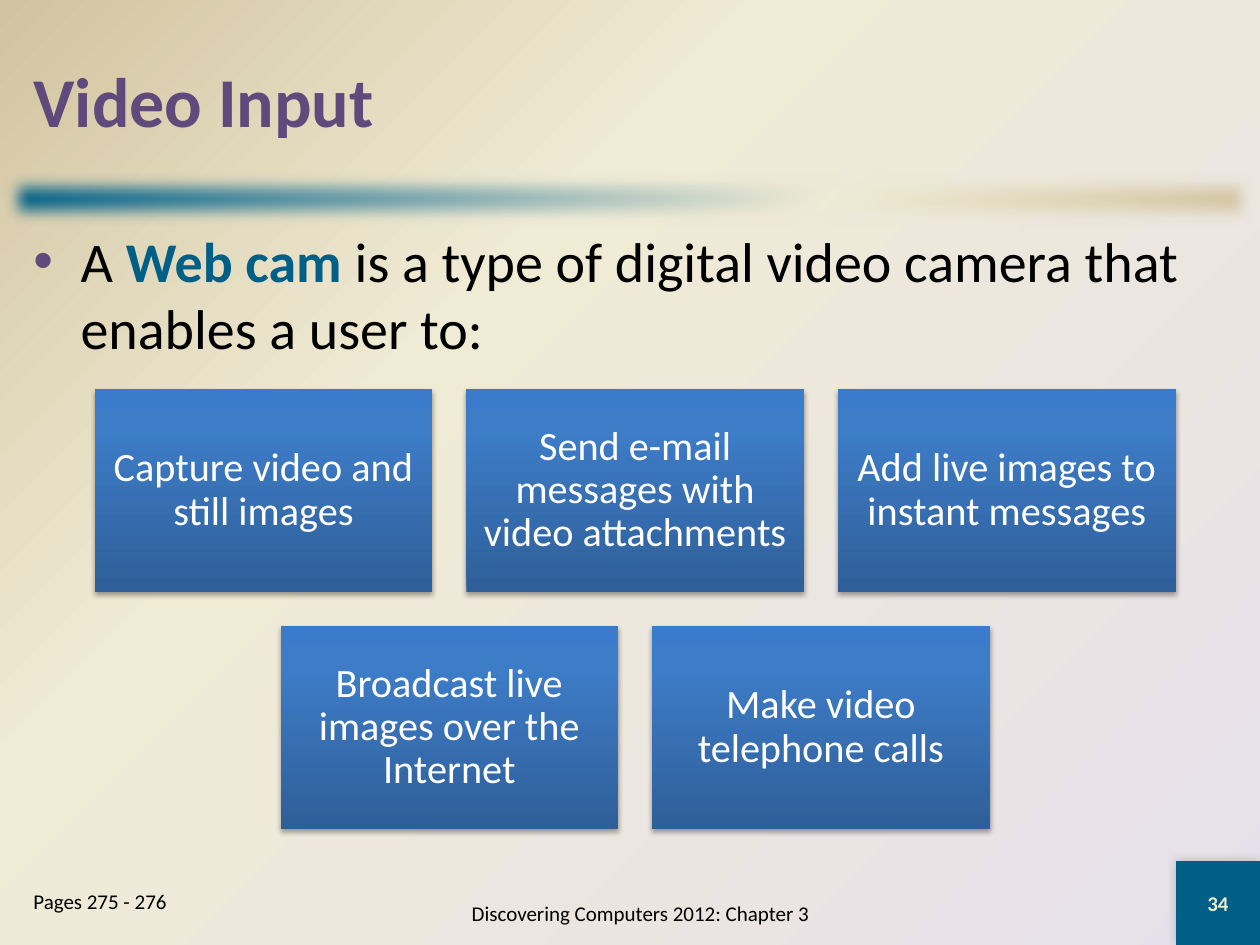
from lxml.etree import SubElement
from pptx import Presentation
from pptx.dml.color import RGBColor
from pptx.enum.shapes import MSO_SHAPE
from pptx.enum.text import MSO_ANCHOR, PP_ALIGN
from pptx.oxml.ns import qn
from pptx.util import Pt

SLIDE_W, SLIDE_H = 720, 540
FONT = "Calibri"
TEAL, PURPLE, BLACK, WHITE, CREAM = "005F86", "604A7B", "000000", "FFFFFF", "EEEBCA"

TITLE = "Video Input"
INTRO = [
    ("A ", BLACK, False),
    ("Web cam ", TEAL, True),
    ("is a type of digital video camera that enables a user to:", BLACK, False),
]
USES = [
    ["Capture video and still images", "Send e-mail messages with video attachments",
     "Add live images to instant messages"],
    ["Broadcast live images over the Internet", "Make video telephone calls"],
]
PAGES = "Pages 275 - 276"
BOOK = "Discovering Computers 2012: Chapter 3"
PAGE_NUMBER = "34"

BACKDROP = [(0, "E6E0EC"), (65, "F0EBD5"), (100, "D1C39F")]
RULE = [(0, TEAL), (65, "F0EBD5"), (100, "D1C39F")]
CARD = [(0, "2F5F99"), (80, "3D7CC7"), (100, "3A7CCB")]

CARD_W, CARD_H, CARD_GAP = 193, 116, 19.4
CARDS_TOP, CARDS_CENTER = 222.3, 363
CORNER = 48
CORNER_BOX = (SLIDE_W - CORNER, SLIDE_H - CORNER, CORNER, CORNER)


def rgb(value):
    return RGBColor.from_string(value)


def apply(target, **values):
    for name, value in values.items():
        setattr(target, name, value)


def node(parent, tag, **attributes):
    return SubElement(parent, qn(tag), {key: str(value) for key, value in attributes.items()})


def paint_gradient(fill, owner, stops, angle=None):
    fill.gradient()
    gradient = next(owner.iter(qn("a:gradFill")))
    for child in list(gradient):
        gradient.remove(child)
    stop_list = node(gradient, "a:gsLst")
    for position, color in stops:
        stop = node(stop_list, "a:gs", pos=position * 1000)
        node(stop, "a:srgbClr", val=color)
    if angle is None:
        path = node(gradient, "a:path", path="circle")
        node(path, "a:fillToRect", l=100000, t=100000)
    else:
        node(gradient, "a:lin", ang=angle * 60000, scaled=0)


def add_effect(shape, tag, **attributes):
    shape.shadow.inherit = False
    return node(shape._element.spPr.find(qn("a:effectLst")), tag, **attributes)


def add_shadow(shape, alpha, blur, distance, angle):
    shadow = add_effect(shape, "a:outerShdw", blurRad=Pt(blur), dist=Pt(distance),
                        dir=angle * 60000, rotWithShape=0)
    color = node(shadow, "a:srgbClr", val=BLACK)
    node(color, "a:alpha", val=alpha * 1000)


def add_rectangle(slide, box):
    rectangle = slide.shapes.add_shape(MSO_SHAPE.RECTANGLE, *map(Pt, box))
    rectangle.line.fill.background()
    return rectangle


def write(holder, runs, size, align=PP_ALIGN.LEFT, anchor=MSO_ANCHOR.TOP, inset=None):
    frame = holder.text_frame
    apply(frame, word_wrap=True, vertical_anchor=anchor)
    if inset is not None:
        apply(frame, **{f"margin_{side}": Pt(inset) for side in ("left", "top", "right", "bottom")})
    paragraph = frame.paragraphs[0]
    paragraph.alignment = align
    for text, color, bold in runs:
        run = paragraph.add_run()
        run.text = text
        apply(run.font, name=FONT, size=Pt(size), bold=bold)
        run.font.color.rgb = rgb(color)
    return paragraph


def add_text(slide, box, runs, size, **layout):
    return write(slide.shapes.add_textbox(*map(Pt, box)), runs, size, **layout)


def add_bullet(paragraph, mark, color, indent):
    properties = paragraph._p.get_or_add_pPr()
    properties.set("marL", str(Pt(indent)))
    properties.set("indent", str(-Pt(indent)))
    node(node(properties, "a:buClr"), "a:srgbClr", val=color)
    node(properties, "a:buFont", typeface="Arial")
    node(properties, "a:buChar", char=mark)


def add_cards(slide):
    for row, uses in enumerate(USES):
        row_width = len(uses) * (CARD_W + CARD_GAP) - CARD_GAP
        top = CARDS_TOP + row * (CARD_H + CARD_GAP)
        for column, use in enumerate(uses):
            left = CARDS_CENTER - row_width / 2 + column * (CARD_W + CARD_GAP)
            card = add_rectangle(slide, (left, top, CARD_W, CARD_H))
            paint_gradient(card.fill, card._element, CARD, 270)
            add_shadow(card, 35, 3.1, 1.8, 90)
            label = write(card, [(use, WHITE, False)], 23, align=PP_ALIGN.CENTER,
                          anchor=MSO_ANCHOR.MIDDLE, inset=7)
            label.line_spacing = 0.9


def main():
    deck = Presentation()
    apply(deck, slide_width=Pt(SLIDE_W), slide_height=Pt(SLIDE_H))
    slide = deck.slides.add_slide(deck.slide_layouts[5])
    paint_gradient(slide.background.fill, slide._element, BACKDROP)

    rule = add_rectangle(slide, (0, 96, SLIDE_W, 36))
    paint_gradient(rule.fill, rule._element, RULE, 45)
    add_effect(rule, "a:softEdge", rad=Pt(10))

    corner = add_rectangle(slide, CORNER_BOX)
    corner.fill.solid()
    corner.fill.fore_color.rgb = rgb(TEAL)
    add_shadow(corner, 20, 6, 0, 225)

    title = slide.shapes.title
    apply(title, left=Pt(12), top=Pt(12), width=Pt(696), height=Pt(90))
    write(title, [(TITLE, PURPLE, True)], 40, anchor=MSO_ANCHOR.MIDDLE)

    intro = add_text(slide, (12, 126, 696, 366), INTRO, 32)
    add_bullet(intro, "•", PURPLE, 27)

    centered = {"align": PP_ALIGN.CENTER, "anchor": MSO_ANCHOR.MIDDLE}
    add_text(slide, (216, 504, 300, 36), [(BOOK, BLACK, False)], 12, **centered)
    add_text(slide, CORNER_BOX, [(PAGE_NUMBER, CREAM, True)], 12, **centered)
    add_text(slide, (12, 504, 132, 36), [(PAGES, BLACK, False)], 12)
    add_cards(slide)
    deck.save("out.pptx")


if __name__ == "__main__":
    main()
